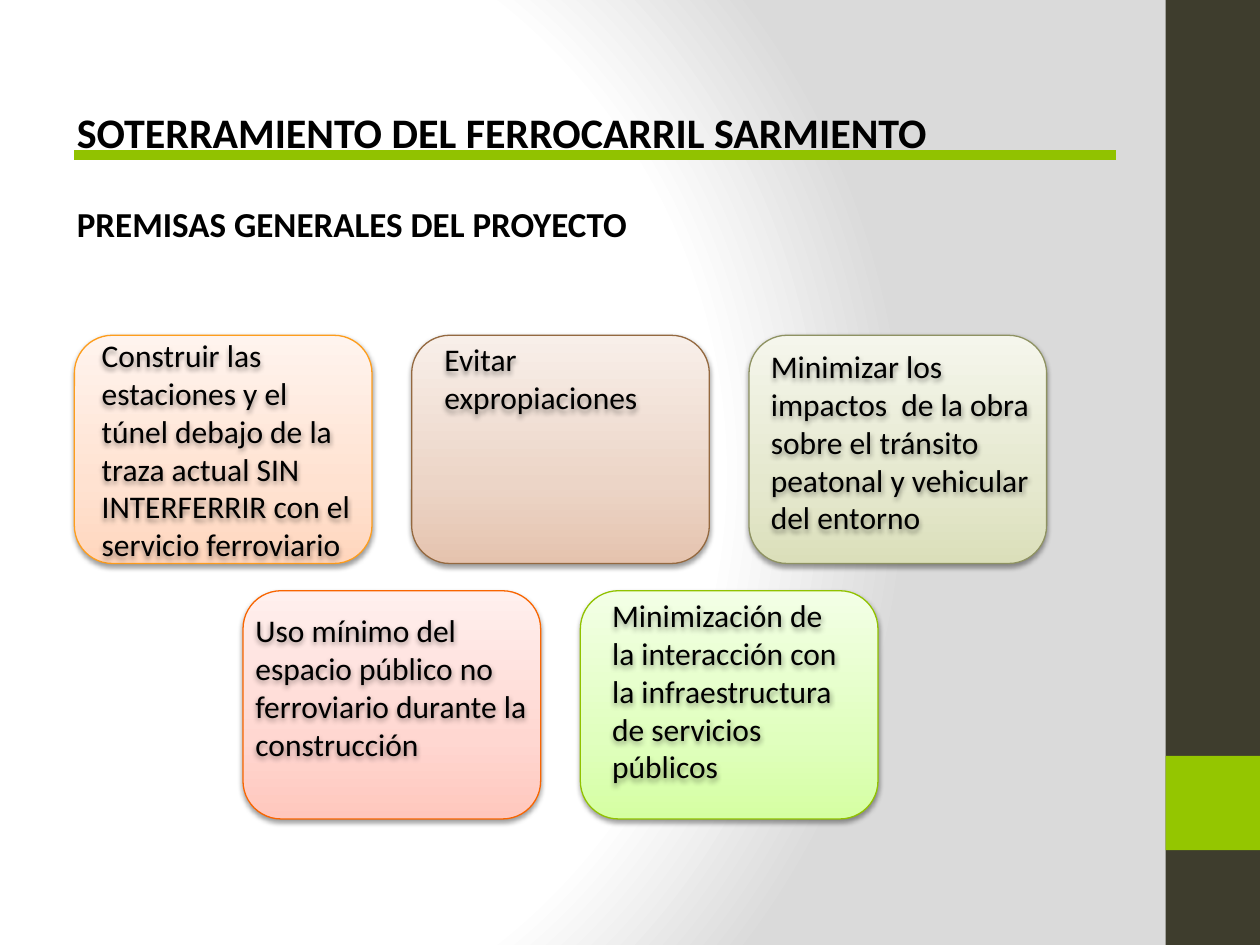
from pptx import Presentation
from pptx import util as u
from pptx.dml.color import RGBColor
from pptx.enum import shapes, text
from pptx.oxml import parse_xml
from pptx.oxml.ns import nsdecls, qn

BLACK = RGBColor(0x00, 0x00, 0x00)
BARK = RGBColor(0x3E, 0x3D, 0x2D)
LIME = RGBColor(0x94, 0xC6, 0x00)
GREEN = RGBColor(0x91, 0xC2, 0x00)
ORANGE = RGBColor(0xFE, 0x9D, 0x1C)
BROWN = RGBColor(0x94, 0x69, 0x40)
OLIVE = RGBColor(0x8E, 0x92, 0x62)
RED = RGBColor(0xF9, 0x65, 0x00)
WHITE = RGBColor(0xFF, 0xFF, 0xFF)
GREY = RGBColor(0xDA, 0xDA, 0xDA)

# Card gradients, from bottom to top
PEACH = [RGBColor.from_string(c) for c in ("FFD6BD", "FFE2D1", "FFF4EE")]
TAN = [RGBColor.from_string(c) for c in ("E5C3AE", "ECD5C7", "F8EFE9")]
MOSS = [RGBColor.from_string(c) for c in ("DBDFBA", "E5E8CE", "F5F6EC")]
ROSE = [RGBColor.from_string(c) for c in ("FFC7BD", "FFD7D1", "FFF0EE")]
MINT = [RGBColor.from_string(c) for c in ("D5FFA2", "E0FFBE", "F3FFE6")]

# Card grid in cm: the second row starts half a step in
LEFT, STEP, CARD_W, CARD_H = 1.5, 6.8, 6.0, 4.6
ROW_TOPS = (6.76, 11.91)


def gradient(stops, direction):
    gs = "".join(f'<a:gs pos="{pos * 1000}"><a:srgbClr val="{color}"/></a:gs>'
                 for pos, color in stops)
    return (f'<a:gradFill {nsdecls("a")} rotWithShape="1">'
            f'<a:gsLst>{gs}</a:gsLst>{direction}</a:gradFill>')


class Deck:
    font = "Calibri"

    def __init__(self, prs):
        self.s = prs.slides.add_slide(prs.slide_layouts[6])

    def background(self):
        fill = gradient(
            [(0, WHITE), (75, WHITE), (100, GREY)],
            '<a:path path="circle"><a:fillToRect l="20000" t="50000" '
            'r="100000" b="50000"/></a:path>')
        bg = parse_xml(f'<p:bg {nsdecls("p")}><p:bgPr>{fill}'
                       f'<a:effectLst {nsdecls("a")}/></p:bgPr></p:bg>')
        self.s._element.cSld.insert(0, bg)

    def shape(self, kind, x, y, w, h):
        sp = self.s.shapes.add_shape(kind, u.Cm(x), u.Cm(y), u.Cm(w), u.Cm(h))
        sp.shadow.inherit = False
        return sp

    def block(self, x, y, w, h, color):
        sp = self.shape(shapes.MSO_SHAPE.RECTANGLE, x, y, w, h)
        sp.fill.solid()
        sp.fill.fore_color.rgb = color
        sp.line.fill.background()

    def soft_shadow(self, sp):
        sp.shadow.inherit = False
        sp._element.spPr.find(qn("a:effectLst")).append(parse_xml(
            f'<a:outerShdw {nsdecls("a")} blurRad="{u.Pt(3.1)}" '
            f'dist="{u.Pt(1.6)}" dir="5400000" rotWithShape="0">'
            '<a:srgbClr val="000000"><a:alpha val="38000"/></a:srgbClr>'
            '</a:outerShdw>'))

    def card(self, row, col, colors, edge):
        x = LEFT + STEP * (col + row / 2)
        sp = self.shape(shapes.MSO_SHAPE.ROUNDED_RECTANGLE,
                        x, ROW_TOPS[row], CARD_W, CARD_H)
        sp.line.color.rgb = edge
        sp.line.width = u.Pt(0.75)
        fill = gradient(zip((0, 35, 100), colors),
                        '<a:lin ang="16200000" scaled="0"/>')
        sp._element.spPr.find(qn("a:prstGeom")).addnext(parse_xml(fill))
        self.soft_shadow(sp)

    def rule(self, x1, x2, y, color, width):
        cx = self.s.shapes.add_connector(
            shapes.MSO_CONNECTOR.STRAIGHT, u.Cm(x1), u.Cm(y), u.Cm(x2), u.Cm(y))
        cx.line.color.rgb = color
        cx.line.width = u.Pt(width)
        cx._element.spPr.append(parse_xml(f'<a:effectLst {nsdecls("a")}/>'))

    def label(self, words, x, y, w, h, size=18, bold=False):
        sp = self.s.shapes.add_textbox(u.Cm(x), u.Cm(y), u.Cm(w), u.Cm(h))
        tf = sp.text_frame
        tf.word_wrap = True
        tf.auto_size = text.MSO_AUTO_SIZE.SHAPE_TO_FIT_TEXT
        p = tf.paragraphs[0]
        r = p.add_run()
        r.text = words
        r.font.name = self.font
        r.font.size = u.Pt(size)
        r.font.bold = bold
        r.font.color.rgb = BLACK
        return sp

    def heading(self, words, x, y, w, h, size):
        p = self.label(words, x, y, w, h, size, True).text_frame.paragraphs[0]
        p.line_spacing = 1.5
        p.space_before = p.space_after = u.Pt(6)

    def premise(self, words, x, y, w, h, inset=0.13):
        sp = self.label(words, x, y, w, h)
        sp.text_frame.margin_top = u.Cm(inset)
        self.soft_shadow(sp)


def main():
    prs = Presentation()
    prs.slide_width, prs.slide_height = u.Cm(25.4), u.Cm(19.05)
    deck = Deck(prs)

    # Background and side band
    deck.background()
    deck.block(23.5, 0, 1.9, 19.05, BARK)
    deck.block(23.5, 15.24, 1.9, 1.9, LIME)

    # Headings
    deck.rule(1.5, 22.5, 3.12, GREEN, 6)
    deck.heading("SOTERRAMIENTO DEL FERROCARRIL SARMIENTO",
                 1.3, 1.52, 22.4, 1.63, 24)
    deck.heading("PREMISAS GENERALES DEL PROYECTO", 1.3, 3.53, 12.2, 1.55, 20)

    # Premises: first row
    deck.card(0, 0, PEACH, ORANGE)
    deck.premise("Construir las estaciones y el túnel debajo de la traza actual "
                 "SIN INTERFERRIR con el servicio ferroviario",
                 1.8, 6.65, 5.7, 4.88)
    deck.card(0, 1, TAN, BROWN)
    deck.premise("Evitar expropiaciones", 8.71, 6.73, 5.2, 1.8)
    deck.card(0, 2, MOSS, OLIVE)
    deck.premise("Minimizar los impactos  de la obra sobre el tránsito peatonal "
                 "y vehicular del entorno", 15.29, 6.53, 6.4, 4.45, inset=0.47)

    # Premises: second row
    deck.card(1, 0, ROSE, RED)
    deck.premise("Uso mínimo del espacio público no ferroviario durante la "
                 "construcción", 4.9, 12.19, 6.4, 3.33)
    deck.card(1, 1, MINT, GREEN)
    deck.premise("Minimización de la interacción con la infraestructura de "
                 "servicios públicos", 12.09, 11.89, 5.2, 4.11)

    prs.save("out.pptx")


if __name__ == "__main__":
    main()
